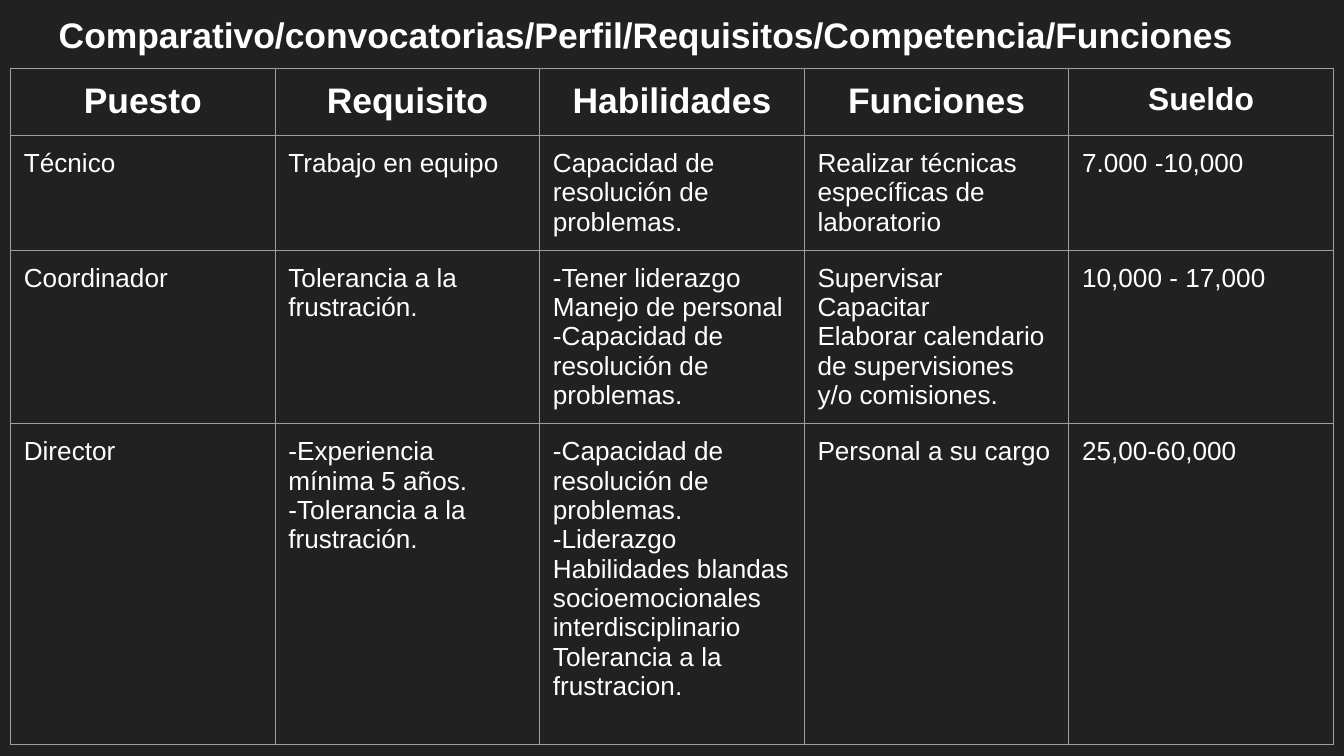
"""Build a slide comparing job openings by requirements, skills, duties and salary."""
import pptx
import pptx.dml.color
import pptx.enum.text
import pptx.oxml
import pptx.oxml.ns
import pptx.util

Cm = pptx.util.Cm
Pt = pptx.util.Pt
Align = pptx.enum.text.PP_ALIGN

TITLE = "Comparativo/convocatorias/Perfil/Requisitos/Competencia/Funciones"
HEADINGS = ["Puesto", "Requisito", "Habilidades", "Funciones", "Sueldo"]
POSITIONS = [
    ["Técnico", "Trabajo en equipo", "Capacidad de resolución de problemas.",
     "Realizar técnicas específicas de laboratorio", "7.000 -10,000"],
    ["Coordinador", "Tolerancia a la frustración.",
     "-Tener liderazgo\nManejo de personal\n-Capacidad de resolución de problemas.",
     "Supervisar\nCapacitar\nElaborar calendario de supervisiones y/o comisiones.",
     "10,000 - 17,000"],
    ["Director", "-Experiencia mínima 5 años.\n-Tolerancia a la frustración.",
     "-Capacidad de resolución de problemas.\n-Liderazgo\nHabilidades blandas\n"
     "socioemocionales\ninterdisciplinario\nTolerancia a la frustracion.",
     "Personal a su cargo", "25,00-60,000"],
]
THEME = {"font": "Arial", "background": "212121", "text": "FFFFFF", "border": "9E9E9E",
         "title": 19, "heading": 19, "last_heading": 17, "body": 14, "border_width": 0.75}
INSET = Cm(0.25)
COLUMN_WIDTH = Cm(5)
ROW_HEIGHTS = [Cm(1.27), Cm(2.17), Cm(3.28), Cm(6.06)]


def color(role):
    return pptx.dml.color.RGBColor.from_string(THEME[role])


def write(frame, text, size, bold=False, align=Align.LEFT):
    frame.text = text
    for para in frame.paragraphs:
        para.alignment = align
        para.font.name = THEME["font"]
        para.font.size = Pt(THEME[size])
        para.font.bold = bold
        para.font.color.rgb = color("text")


def set_insets(holder):
    holder.margin_left = holder.margin_right = INSET
    holder.margin_top = holder.margin_bottom = INSET
    holder.vertical_anchor = pptx.enum.text.MSO_ANCHOR.TOP


def style_cell(cell):
    set_insets(cell)
    properties = cell._tc.get_or_add_tcPr()
    for side in ("lnL", "lnR", "lnT", "lnB"):
        properties.append(pptx.oxml.parse_xml(
            f'<a:{side} {pptx.oxml.ns.nsdecls("a")} w="{Pt(THEME["border_width"])}">'
            f'<a:solidFill><a:srgbClr val="{THEME["border"]}"/></a:solidFill></a:{side}>'))
    cell.fill.background()


def add_title(page):
    title = page.shapes.title
    title.left, title.top, title.width, title.height = Cm(0.86), Cm(0), Cm(23.67), Cm(1.6)
    frame = title.text_frame
    frame.word_wrap = True
    frame.auto_size = pptx.enum.text.MSO_AUTO_SIZE.NONE
    set_insets(frame)
    write(frame, TITLE, "title", bold=True)


def add_comparison(page):
    rows = [HEADINGS] + POSITIONS
    table = page.shapes.add_table(len(rows), len(HEADINGS), Cm(0.2), Cm(1.29),
                                  COLUMN_WIDTH * len(HEADINGS), sum(ROW_HEIGHTS)).table
    table.first_row = table.horz_banding = False
    for column in table.columns:
        column.width = COLUMN_WIDTH
    for row_index, (texts, height) in enumerate(zip(rows, ROW_HEIGHTS)):
        table.rows[row_index].height = height
        for column_index, text in enumerate(texts):
            cell = table.cell(row_index, column_index)
            style_cell(cell)
            if row_index == 0:
                size = "last_heading" if text == HEADINGS[-1] else "heading"
                write(cell.text_frame, text, size, bold=True, align=Align.CENTER)
            else:
                write(cell.text_frame, text, "body")


def main():
    deck = pptx.Presentation()
    deck.slide_width, deck.slide_height = Cm(25.4), Cm(14.29)
    page = deck.slides.add_slide(deck.slide_layouts.get_by_name("Title Only"))
    page.background.fill.solid()
    page.background.fill.fore_color.rgb = color("background")
    add_title(page)
    add_comparison(page)
    deck.save("out.pptx")


if __name__ == "__main__":
    main()
